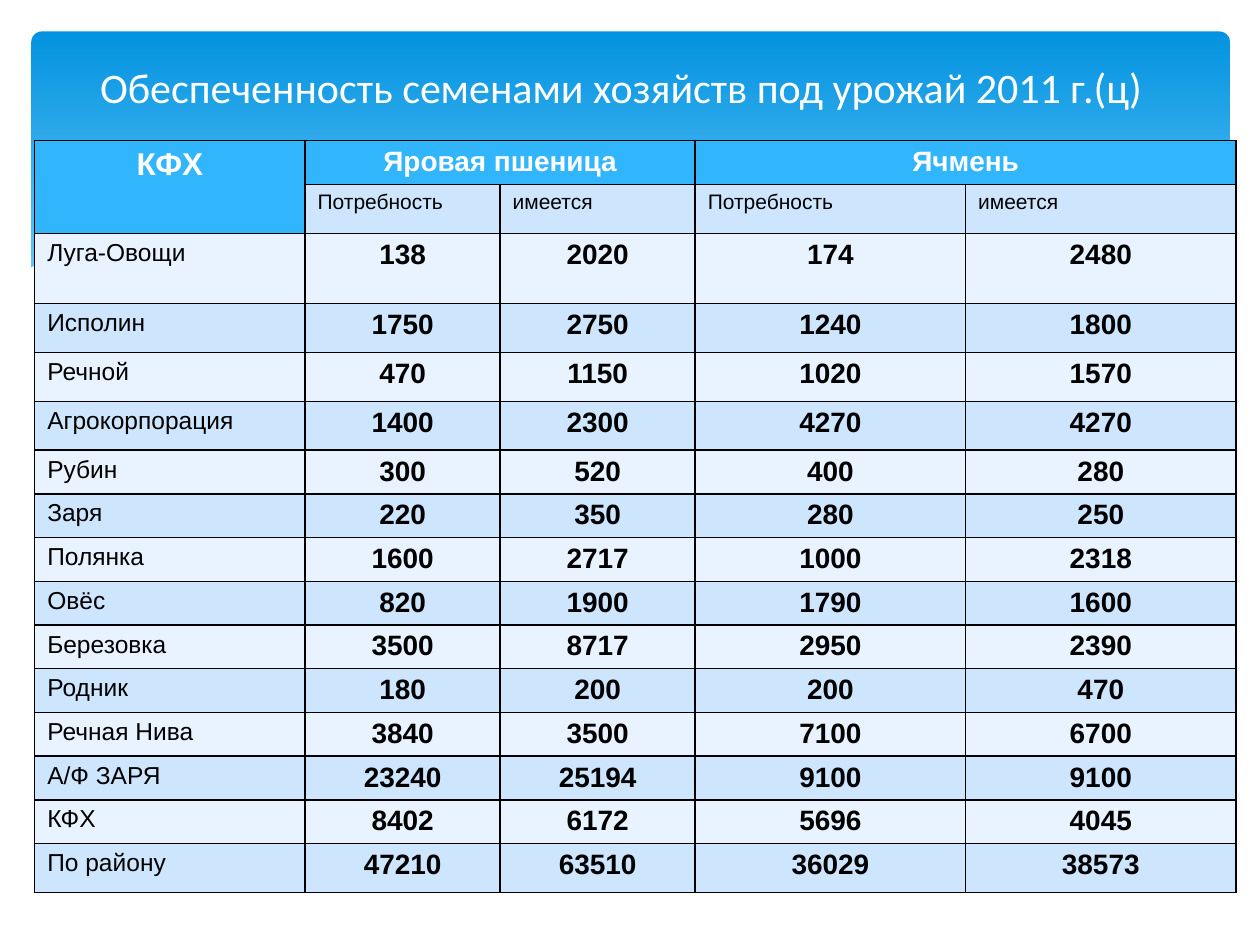
from lxml import etree
from pptx import Presentation
from pptx.dml.color import RGBColor
from pptx.enum.shapes import MSO_SHAPE
from pptx.enum.text import MSO_ANCHOR, PP_ALIGN
from pptx.oxml.ns import qn
from pptx.util import Pt

ROUNDED = MSO_SHAPE.ROUNDED_RECTANGLE
MIDDLE = MSO_ANCHOR.MIDDLE
LEFT, CENTER = PP_ALIGN.LEFT, PP_ALIGN.CENTER

WHITE = RGBColor(0xFF, 0xFF, 0xFF)
BLACK = RGBColor(0x00, 0x00, 0x00)
BANNER_TOP = RGBColor(0x02, 0x93, 0xE0)
BANNER_BOTTOM = RGBColor(0x83, 0xD3, 0xFE)
HEADER_BLUE = RGBColor(0x31, 0xB6, 0xFD)
BAND_DARK = RGBColor(0xCE, 0xE5, 0xFE)
BAND_LIGHT = RGBColor(0xE8, 0xF3, 0xFF)

# Content
TITLE = "Обеспеченность семенами хозяйств под урожай 2011 г.(ц)"
# Header cells: column, last row and last column of the span, text, size
HEADERS = [
    (0, 1, 0, "КФХ", 18),
    (1, 0, 2, "Яровая пшеница", 16),
    (3, 0, 4, "Ячмень", 16),
]
SUBHEADERS = ["Потребность", "имеется"] * 2
FARMS = [
    ("Луга-Овощи", 138, 2020, 174, 2480),
    ("Исполин", 1750, 2750, 1240, 1800),
    ("Речной", 470, 1150, 1020, 1570),
    ("Агрокорпорация", 1400, 2300, 4270, 4270),
    ("Рубин", 300, 520, 400, 280),
    ("Заря", 220, 350, 280, 250),
    ("Полянка", 1600, 2717, 1000, 2318),
    ("Овёс", 820, 1900, 1790, 1600),
    ("Березовка", 3500, 8717, 2950, 2390),
    ("Родник", 180, 200, 200, 470),
    ("Речная Нива", 3840, 3500, 7100, 6700),
    ("А/Ф ЗАРЯ", 23240, 25194, 9100, 9100),
    ("КФХ", 8402, 6172, 5696, 4045),
    ("По району", 47210, 63510, 36029, 38573),
]
COLUMN_WIDTHS = [154.5, 111.5, 111.5, 154.5, 154.5]
ROW_HEIGHTS = [25, 28, 40] + [28] * 3 + [25] * 9 + [28]

# White wave that closes the banner
WAVE = [
    (703.5, 177), (670, 189), (630, 196.5), (582, 199.5), (523, 197),
    (451, 186), (362, 167.5), (322, 158.5), (263, 145.5), (210, 137.5),
    (166, 133), (127, 132.5), (95, 134.5), (68, 138.5), (42, 144.5),
    (26, 149), (16.5, 153.5), (16.5, 237), (703.5, 237),
]


def format_text(frame, text, size, color, font, align=LEFT, bold=False):
    frame.text = text
    para = frame.paragraphs[0]
    para.alignment = align
    span = para.runs[0]
    span.font.name = font
    span.font.size = Pt(size)
    span.font.bold = bold
    span.font.color.rgb = color


def add_borders(cell):
    properties = cell._tc.get_or_add_tcPr()
    for side in ("a:lnL", "a:lnR", "a:lnT", "a:lnB"):
        line = etree.SubElement(properties, qn(side), w=str(Pt(1)))
        fill = etree.SubElement(line, qn("a:solidFill"))
        etree.SubElement(fill, qn("a:srgbClr"), val=str(BLACK))


def fill_cell(cell, text, size, fill, color=BLACK, align=LEFT, bold=False):
    format_text(cell.text_frame, text, size, color, "Arial", align, bold)
    cell.fill.solid()
    cell.fill.fore_color.rgb = fill


deck = Presentation()
deck.slide_width, deck.slide_height = Pt(720), Pt(540)
page = deck.slides.add_slide(deck.slide_layouts[6])

# Gradient banner
banner = page.shapes.add_shape(ROUNDED, Pt(18), Pt(18), Pt(684.7), Pt(194.4))
banner.adjustments[0] = 0.03
banner.shadow.inherit = False
banner.line.fill.background()
banner.fill.gradient()
banner.fill.gradient_angle = 270
top_stop, bottom_stop = banner.fill.gradient_stops
top_stop.color.rgb, top_stop.position = BANNER_TOP, 0
bottom_stop.color.rgb, bottom_stop.position = BANNER_BOTTOM, 0.9

# Wave
points = [(Pt(x), Pt(y)) for x, y in WAVE]
builder = page.shapes.build_freeform(*points[0])
builder.add_line_segments(points[1:], close=True)
wave = builder.convert_to_shape()
wave.shadow.inherit = False
wave.line.fill.background()
wave.fill.solid()
wave.fill.fore_color.rgb = WHITE

# Table grid
table = page.shapes.add_table(
    len(ROW_HEIGHTS), len(COLUMN_WIDTHS), Pt(19.8), Pt(80.4),
    Pt(sum(COLUMN_WIDTHS)), Pt(sum(ROW_HEIGHTS))).table
for column, width in zip(table.columns, COLUMN_WIDTHS):
    column.width = Pt(width)
for row, height in zip(table.rows, ROW_HEIGHTS):
    row.height = Pt(height)
for cell in table.iter_cells():
    cell.margin_top = cell.margin_bottom = Pt(3.3)
    add_borders(cell)

# Header rows
for column, last_row, last_column, text, size in HEADERS:
    cell = table.cell(0, column)
    cell.merge(table.cell(last_row, last_column))
    fill_cell(cell, text, size, HEADER_BLUE, WHITE, CENTER, True)
for column, text in enumerate(SUBHEADERS, 1):
    fill_cell(table.cell(1, column), text, 12, BAND_DARK)

# Farm rows
for row, (farm, *amounts) in enumerate(FARMS, 2):
    band = BAND_DARK if row % 2 else BAND_LIGHT
    fill_cell(table.cell(row, 0), farm, 14, band)
    for column, amount in enumerate(amounts, 1):
        fill_cell(table.cell(row, column), str(amount), 16, band,
                  align=CENTER, bold=True)

# Title
title = page.shapes.add_textbox(Pt(31), Pt(0), Pt(648), Pt(98.6))
title.text_frame.word_wrap = True
title.text_frame.vertical_anchor = MIDDLE
format_text(title.text_frame, TITLE, 24, WHITE, "Calibri", CENTER)

deck.save("out.pptx")
